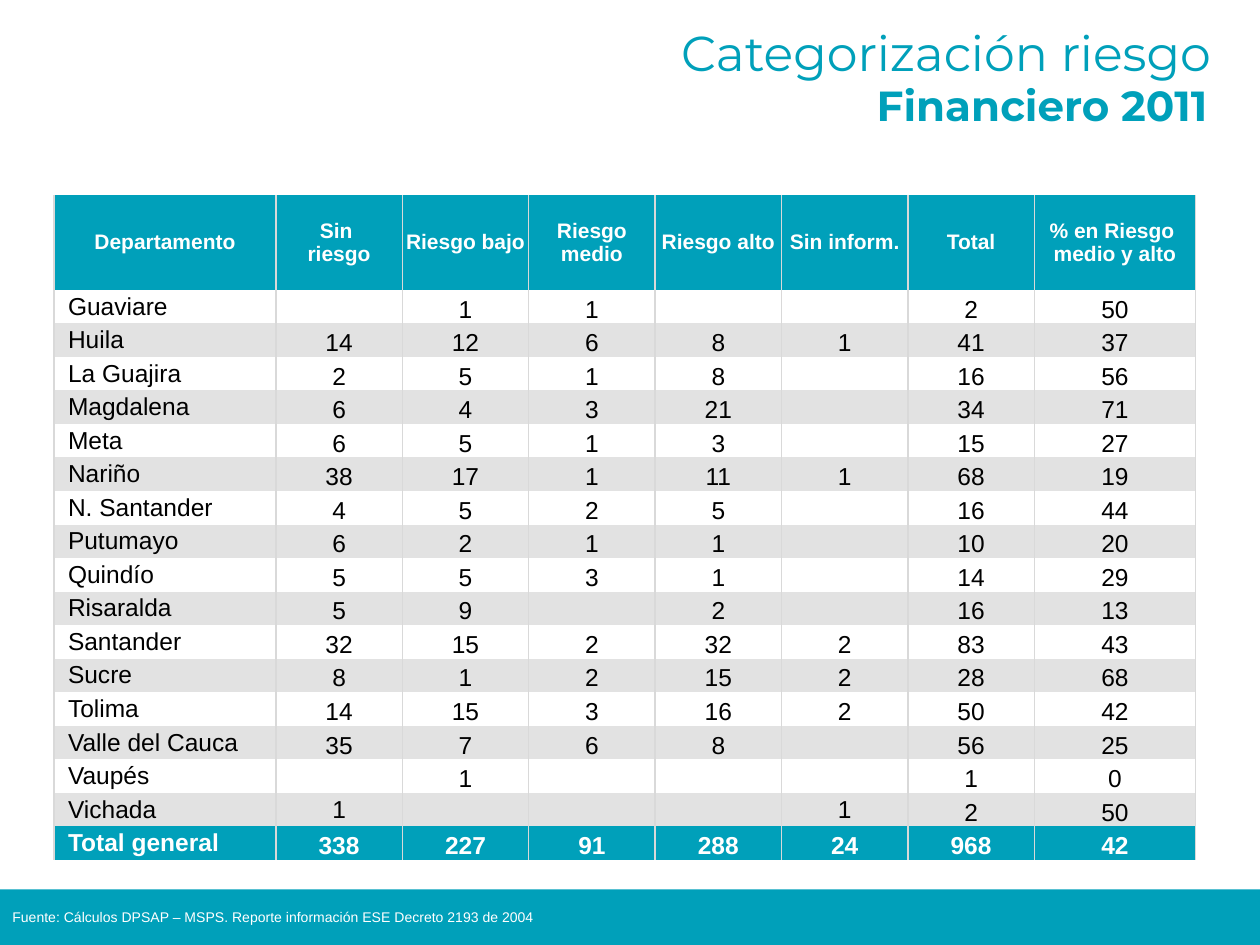
from lxml.etree import SubElement
from pptx import Presentation
from pptx.dml.color import RGBColor
from pptx.enum.shapes import MSO_SHAPE
from pptx.enum.text import MSO_ANCHOR as Anchor, MSO_AUTO_SIZE as AutoSize, PP_ALIGN as Align
from pptx.oxml.ns import qn
from pptx.util import Inches, Pt

TEAL = RGBColor(0x00, 0xA0, 0xBA)
GRAY = RGBColor(0xE2, 0xE2, 0xE2)
RULE = RGBColor(0xD9, 0xD9, 0xD9)
WHITE = RGBColor(0xFF, 0xFF, 0xFF)
BLACK = RGBColor(0x00, 0x00, 0x00)
NO_STYLE = "{2D5ABB26-0587-4C30-8999-92F81FD0307C}"

HEADERS = ["Departamento", "Sin \vriesgo", "Riesgo bajo", "Riesgo medio", "Riesgo alto",
           "Sin inform.", "Total", "% en Riesgo \vmedio y alto"]
DEPARTMENTS = [
    ("Guaviare", "", 1, 1, "", "", 2, 50),
    ("Huila", 14, 12, 6, 8, 1, 41, 37),
    ("La Guajira", 2, 5, 1, 8, "", 16, 56),
    ("Magdalena", 6, 4, 3, 21, "", 34, 71),
    ("Meta", 6, 5, 1, 3, "", 15, 27),
    ("Nariño", 38, 17, 1, 11, 1, 68, 19),
    ("N. Santander", 4, 5, 2, 5, "", 16, 44),
    ("Putumayo", 6, 2, 1, 1, "", 10, 20),
    ("Quindío", 5, 5, 3, 1, "", 14, 29),
    ("Risaralda", 5, 9, "", 2, "", 16, 13),
    ("Santander", 32, 15, 2, 32, 2, 83, 43),
    ("Sucre", 8, 1, 2, 15, 2, 28, 68),
    ("Tolima", 14, 15, 3, 16, 2, 50, 42),
    ("Valle del Cauca", 35, 7, 6, 8, "", 56, 25),
    ("Vaupés", "", 1, "", "", "", 1, 0),
    ("Vichada", 1, "", "", "", 1, 2, 50),
]
TOTALS = ("Total general", 338, 227, 91, 288, 24, 968, 42)


class SlideBuilder:
    fonts = {
        "title": {"name": "Montserrat", "size": Pt(28), "bold": False, "color": TEAL},
        "subtitle": {"name": "Montserrat", "size": Pt(24), "bold": True, "color": TEAL},
        "source": {"name": "Arial", "size": Pt(8), "bold": False, "color": WHITE},
        "header": {"name": "Arial", "size": Pt(12), "bold": True, "color": WHITE},
        "body": {"name": "Arial", "size": Pt(14), "bold": False, "color": BLACK},
        "total": {"name": "Arial", "size": Pt(14), "bold": True, "color": WHITE},
    }

    def __init__(self, page):
        self.page = page

    def fill_text(self, frame, text, style, align):
        values = self.fonts[style]
        points = str(int(values["size"].pt * 100))
        frame.text = text
        para = frame.paragraphs[0]
        para.alignment = align
        for span in para.runs:
            for name, value in values.items():
                if name == "color":
                    span.font.color.rgb = value
                else:
                    setattr(span.font, name, value)
        for line_break in para._p.findall(qn("a:br")):
            SubElement(line_break, qn("a:rPr"), sz=points)
        if not para.runs:
            SubElement(para._p, qn("a:endParaRPr"), sz=points)

    def place(self, box, area, text, style, **layout):
        box.left, box.top, box.width, box.height = map(Inches, area)
        frame = box.text_frame
        self.fill_text(frame, text, style, layout.pop("align"))
        frame.word_wrap = True
        for name, value in layout.items():
            setattr(frame, name, value)

    def title(self, area, text, **layout):
        self.place(self.page.shapes.title, area, text, "title", **layout)

    def text(self, area, text, style, **layout):
        box = self.page.shapes.add_textbox(*map(Inches, area))
        self.place(box, area, text, style, **layout)

    def bar(self, area, color):
        box = self.page.shapes.add_shape(MSO_SHAPE.RECTANGLE, *map(Inches, area))
        box.shadow.inherit = False
        box.fill.solid()
        box.fill.fore_color.rgb = color
        box.line.fill.background()

    def cell(self, cell, text, style, fill, align, anchor, indent, sides):
        properties = cell._tc.get_or_add_tcPr()
        for side in sides:
            line = SubElement(properties, qn(f"a:ln{side}"), w=str(Pt(1)))
            SubElement(SubElement(line, qn("a:solidFill")), qn("a:srgbClr"), val=str(RULE))
        if fill is None:
            cell.fill.background()
        else:
            cell.fill.solid()
            cell.fill.fore_color.rgb = fill
        layout = {"margin_left": Inches(indent), "margin_right": 0, "margin_top": 0,
                  "margin_bottom": 0, "vertical_anchor": anchor}
        for name, value in layout.items():
            setattr(cell, name, value)
        self.fill_text(cell.text_frame, text, style, align)

    def table(self, area, widths, header_height, rows):
        last = len(rows) - 1
        frame = self.page.shapes.add_table(len(rows), len(widths), *map(Inches, area))
        table = frame.table
        table.first_row = table.horz_banding = False
        table._tbl.tblPr.find(qn("a:tableStyleId")).text = NO_STYLE
        for column, width in zip(table.columns, widths):
            column.width = Inches(width)
        for index, values in enumerate(rows):
            height = (area[3] - header_height) / last if index else header_height
            table.rows[index].height = Inches(height)
            style = {0: "header", last: "total"}.get(index, "body")
            fill = TEAL if style != "body" else None if index % 2 else GRAY
            for position, value in enumerate(values):
                is_name = index > 0 and position == 0
                is_middle = index == 0 or position == 0 or (
                    values[0] == "Vichada" and position in (1, 5))
                sides = {(last, 2): "L", (last, 3): "R"}.get((index, position), "LR")
                self.cell(table.cell(index, position), str(value), style, fill,
                          Align.LEFT if is_name else Align.CENTER,
                          Anchor.MIDDLE if is_middle else Anchor.BOTTOM,
                          0.11 if is_name else 0, sides)


def main():
    deck = Presentation()
    deck.slide_width, deck.slide_height = Inches(10), Inches(7.5)
    builder = SlideBuilder(deck.slides.add_slide(deck.slide_layouts[5]))
    builder.bar((0, 7.06, 10, 0.44), TEAL)
    count_width = (9.06 - 1.76 - 1.28) / 6
    builder.table((0.43, 1.55, 9.06, 5.28), [1.76] + [count_width] * 6 + [1.28], 0.75,
                  [HEADERS, *DEPARTMENTS, TOTALS])
    builder.text((0, 7.16, 6.96, 0.24),
                 "Fuente: Cálculos DPSAP – MSPS. Reporte información ESE Decreto 2193 de 2004",
                 "source", align=Align.LEFT, auto_size=AutoSize.SHAPE_TO_FIT_TEXT)
    builder.text((6.5, 0.52, 3.18, 0.63), "Financiero 2011", "subtitle",
                 align=Align.RIGHT, vertical_anchor=Anchor.MIDDLE)
    builder.title((4.61, 0.13, 5.1, 0.57), "Categorización riesgo", align=Align.RIGHT,
                  vertical_anchor=Anchor.TOP, auto_size=AutoSize.SHAPE_TO_FIT_TEXT)
    deck.save("out.pptx")


if __name__ == "__main__":
    main()
